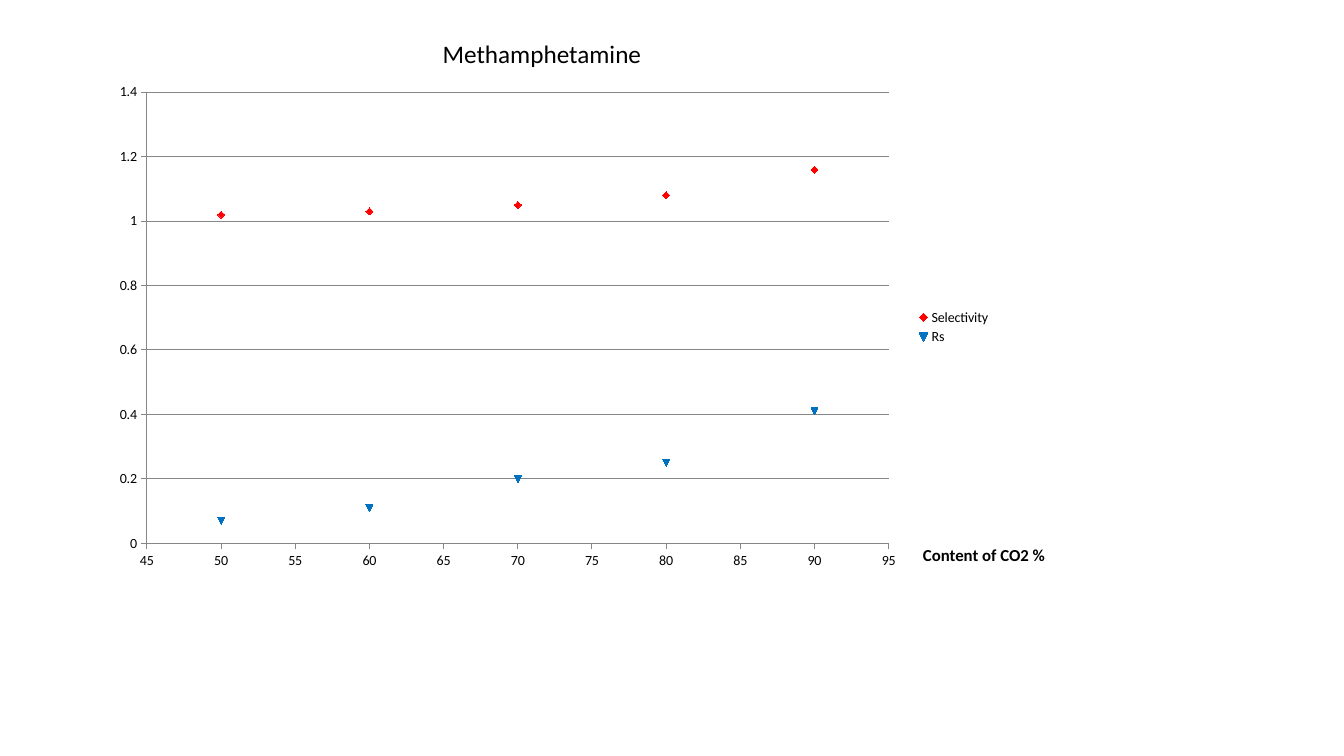
from lxml import etree
from pptx import Presentation
from pptx.chart.data import XyChartData
from pptx.dml.color import RGBColor
from pptx.enum.chart import (XL_CHART_TYPE, XL_LEGEND_POSITION,
                             XL_MARKER_STYLE, XL_TICK_MARK)
from pptx.enum.text import MSO_ANCHOR, PP_ALIGN
from pptx.oxml.ns import qn
from pptx.util import Cm, Pt

FONT = "Calibri"
COLORS = {"text": "000000", "grid": "868686",
          "Selectivity": "FF0000", "Rs": "0070C0"}
CO2_CONTENT = [50, 60, 70, 80, 90]
SERIES = {"Selectivity": [1.02, 1.03, 1.05, 1.08, 1.16],
          "Rs": [0.07, 0.11, 0.2, 0.25, 0.41]}
PLOT_LAYOUT = {"x": 0.05, "y": 0.035, "w": 0.825, "h": 0.893}


def color(name):
    return RGBColor.from_string(COLORS[name])


def set_font(font, size, bold=False):
    for attr, value in {"name": FONT, "size": Pt(size), "bold": bold}.items():
        setattr(font, attr, value)
    font.color.rgb = color("text")


def fill_text(sp, text, size, bold=False):
    tf = sp.text_frame
    tf.word_wrap = True
    tf.vertical_anchor = MSO_ANCHOR.TOP
    p = tf.paragraphs[0]
    p.alignment = PP_ALIGN.LEFT
    p.line_spacing = 1.0
    p.space_before = Pt(0)
    r = p.add_run()
    r.text = text
    set_font(r.font, size, bold)


def add_title(s, text):
    sp = s.shapes.title
    box = {"left": Cm(10.9), "top": Cm(0.84), "width": Cm(10.03), "height": Cm(1.02)}
    for attr, value in box.items():
        setattr(sp, attr, value)
    fill_text(sp, text, 18)


def add_label(s, text):
    sp = s.shapes.add_textbox(Cm(23.01), Cm(13.59), Cm(8.59), Cm(0.76))
    fill_text(sp, text, 12, bold=True)


def format_axis(axis, low, high, step, grid):
    settings = {"minimum_scale": low, "maximum_scale": high, "major_unit": step,
                "has_major_gridlines": grid, "has_title": False,
                "major_tick_mark": XL_TICK_MARK.OUTSIDE,
                "minor_tick_mark": XL_TICK_MARK.NONE}
    for attr, value in settings.items():
        setattr(axis, attr, value)
    lines = [axis.format.line]
    if grid:
        lines.append(axis.major_gridlines.format.line)
    for line in lines:
        line.color.rgb = color("grid")
        line.width = Pt(0.75)
    axis.tick_labels.number_format = "General"
    axis.tick_labels.number_format_is_linked = False


def place_plot(chart):
    plot_area = chart._chartSpace.chart.plotArea
    for old in plot_area.findall(qn("c:layout")):
        plot_area.remove(old)
    layout = etree.Element(qn("c:layout"))
    manual = etree.SubElement(layout, qn("c:manualLayout"))
    parts = {"layoutTarget": "inner", "xMode": "edge", "yMode": "edge", **PLOT_LAYOUT}
    for tag, value in parts.items():
        etree.SubElement(manual, qn(f"c:{tag}")).set("val", str(value))
    plot_area.insert(0, layout)


def add_scatter(s):
    data = XyChartData()
    for name, values in SERIES.items():
        series = data.add_series(name)
        for x, y in zip(CO2_CONTENT, values):
            series.add_data_point(x, y)
    chart = s.shapes.add_chart(XL_CHART_TYPE.XY_SCATTER, Cm(2.57), Cm(1.88),
                               Cm(22.66), Cm(12.73), data).chart
    chart.has_title = False
    set_font(chart.font, 10)
    chart.has_legend = True
    chart.legend.position = XL_LEGEND_POSITION.RIGHT
    chart.legend.include_in_layout = False
    chart.plots[0].vary_by_categories = False
    place_plot(chart)

    # Axes
    format_axis(chart.category_axis, 45, 95, 5, grid=False)
    format_axis(chart.value_axis, 0, 1.4, 0.2, grid=True)

    # Markers only; the series index picks the automatic symbol
    for idx, series in enumerate(chart.plots[0].series, start=1):
        series._element.find(qn("c:idx")).set("val", str(idx))
        series.smooth = False
        series.format.line.fill.background()
        marker = series.marker
        marker.style = XL_MARKER_STYLE.AUTOMATIC
        marker.size = 5
        marker.format.fill.solid()
        marker.format.fill.fore_color.rgb = color(series.name)
        marker.format.line.color.rgb = color(series.name)


def main():
    prs = Presentation()
    prs.slide_width, prs.slide_height = Cm(33.87), Cm(19.05)
    s = prs.slides.add_slide(prs.slide_layouts[5])
    add_scatter(s)
    add_title(s, "Methamphetamine")
    add_label(s, "Content of CO2 %")
    prs.save("out.pptx")


if __name__ == "__main__":
    main()
